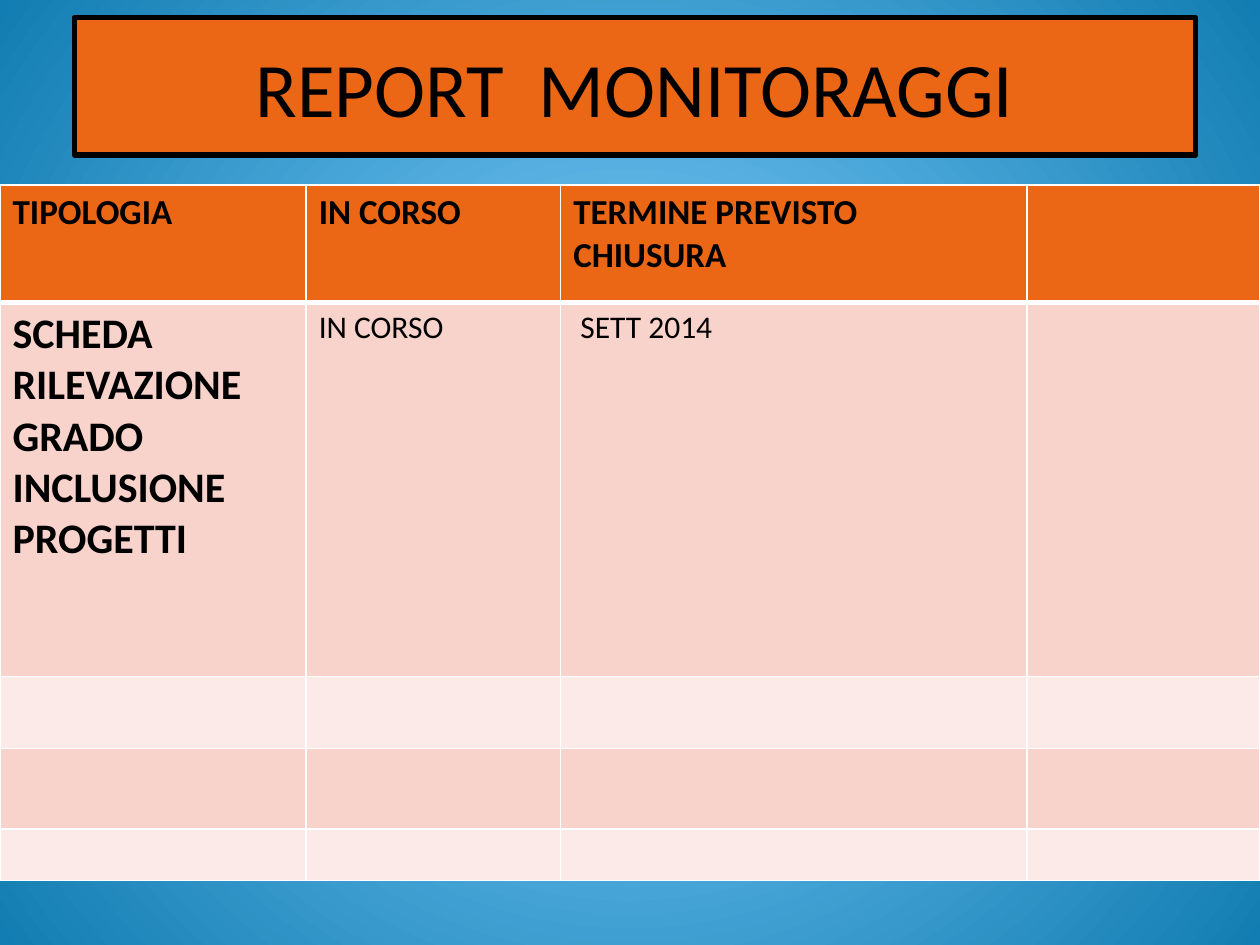
from pptx import Presentation
from pptx.dml.color import RGBColor
from pptx.enum.shapes import MSO_SHAPE
from pptx.enum.text import MSO_ANCHOR, PP_ALIGN
from pptx.oxml import parse_xml
from pptx.oxml.ns import nsdecls
from pptx.util import Inches, Pt

ORANGE = "EB6615"
BLACK = "000000"


def color(value):
    return RGBColor.from_string(value)


def write_text(frame, text, size=18, bold=False, align=PP_ALIGN.LEFT):
    frame.word_wrap = True
    for index, line in enumerate(text.split("\n")):
        paragraph = frame.paragraphs[0] if index == 0 else frame.add_paragraph()
        paragraph.alignment = align
        run = paragraph.add_run()
        run.text = line
        run.font.name = "Calibri"
        run.font.size = Pt(size)
        run.font.bold = bold
        run.font.color.rgb = color(BLACK)


presentation = Presentation()
presentation.slide_width = Inches(10)
presentation.slide_height = Inches(7.5)
slide = presentation.slides.add_slide(presentation.slide_layouts[6])

background = parse_xml(
    f'<p:bg {nsdecls("p", "a")}><p:bgPr><a:gradFill rotWithShape="1"><a:gsLst>'
    '<a:gs pos="0"><a:srgbClr val="83D0FF"/></a:gs>'
    '<a:gs pos="100000"><a:srgbClr val="127DB2"/></a:gs></a:gsLst>'
    '<a:path path="circle"><a:fillToRect l="50000" t="50000" r="50000" b="50000"/></a:path>'
    '</a:gradFill><a:effectLst/></p:bgPr></p:bg>'
)
slide.element.cSld.insert(0, background)

title = slide.shapes.add_shape(
    MSO_SHAPE.RECTANGLE, Inches(0.59), Inches(0.14), Inches(8.9), Inches(1.09)
)
title.shadow.inherit = False
title.fill.solid()
title.fill.fore_color.rgb = color(ORANGE)
title.line.color.rgb = color(BLACK)
title.line.width = Pt(3)
title.text_frame.vertical_anchor = MSO_ANCHOR.MIDDLE
write_text(title.text_frame, "REPORT  MONITORAGGI", size=44, align=PP_ALIGN.CENTER)

column_widths = [2.43, 2.02, 3.7, 1.85]
row_heights = [0.93, 2.97, 0.57, 0.64, 0.41]
row_fills = [ORANGE, "F7D3CC", "FBEAE8", "F7D3CC", "FBEAE8"]
headings = ["TIPOLOGIA", "IN CORSO", "TERMINE PREVISTO\nCHIUSURA"]
entries = ["SCHEDA RILEVAZIONE GRADO INCLUSIONE\nPROGETTI", "IN CORSO", " SETT 2014"]

table = slide.shapes.add_table(
    len(row_heights), len(column_widths),
    Inches(0), Inches(1.47), Inches(10), Inches(sum(row_heights)),
).table
for column, width in zip(table.columns, column_widths):
    column.width = Inches(width)

for row_index, (height, fill) in enumerate(zip(row_heights, row_fills)):
    table.rows[row_index].height = Inches(height)
    for cell in table.rows[row_index].cells:
        properties = cell._tc.get_or_add_tcPr()
        for side in "LRTB":
            thick = (row_index, side) in [(0, "B"), (1, "T")]
            properties.append(parse_xml(
                f'<a:ln{side} {nsdecls("a")} w="{Pt(3 if thick else 1)}"><a:solidFill>'
                f'<a:srgbClr val="FFFFFF"/></a:solidFill></a:ln{side}>'
            ))
        cell.fill.solid()
        cell.fill.fore_color.rgb = color(fill)

for index, (heading, entry) in enumerate(zip(headings, entries)):
    write_text(table.cell(0, index).text_frame, heading, size=20, bold=True)
    write_text(table.cell(1, index).text_frame, entry,
               size=24 if index == 0 else 18, bold=index == 0)

presentation.save("out.pptx")
